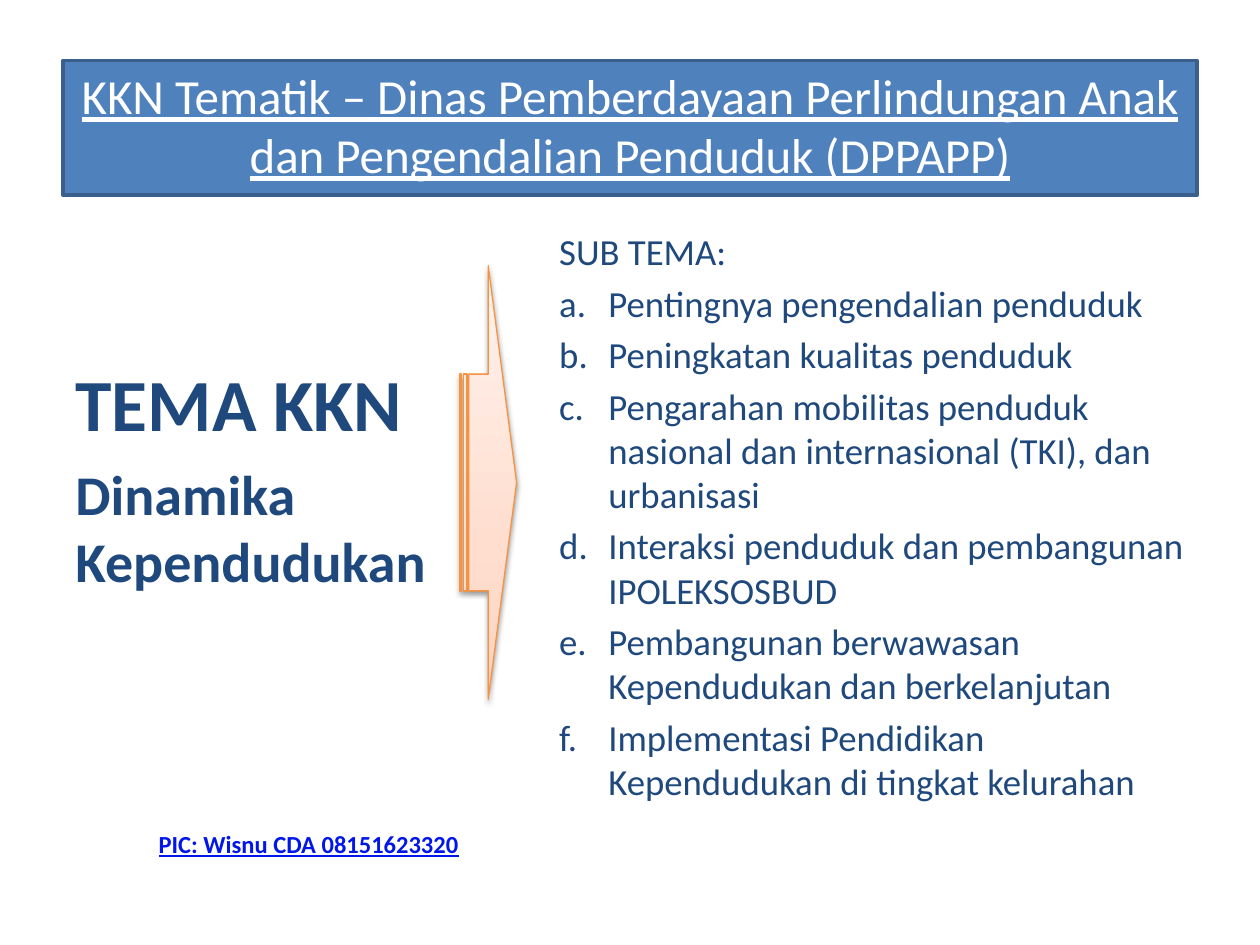
from lxml.etree import SubElement
from pptx import Presentation
from pptx.dml.color import RGBColor
from pptx.enum.shapes import MSO_SHAPE
from pptx.enum.text import MSO_ANCHOR, MSO_AUTO_SIZE, PP_ALIGN
from pptx.oxml import parse_xml
from pptx.oxml.ns import nsdecls, qn
from pptx.util import Inches, Pt

FONT = "Calibri"
NAVY = "1F497D"
SUBTHEMES = [
    "Pentingnya pengendalian penduduk",
    "Peningkatan kualitas penduduk",
    "Pengarahan mobilitas penduduk nasional dan internasional (TKI), dan urbanisasi",
    "Interaksi penduduk dan pembangunan IPOLEKSOSBUD",
    "Pembangunan berwawasan Kependudukan dan berkelanjutan",
    "Implementasi Pendidikan Kependudukan di tingkat kelurahan",
]


def color(value):
    return RGBColor.from_string(value)


def box(left, top, width, height):
    return [Inches(length) for length in (left, top, width, height)]


def format_runs(paragraph, size, hex_color, bold=False, underline=False):
    for run in paragraph.runs:
        font = run.font
        font.name = FONT
        font.size = Pt(size)
        font.bold = bold
        font.underline = underline
        font.color.rgb = color(hex_color)


def add_text(slide, position, text, size, hex_color, **style):
    shape = slide.shapes.add_textbox(*position)
    text_frame = shape.text_frame
    text_frame.word_wrap = True
    text_frame.text = text
    format_runs(text_frame.paragraphs[0], size, hex_color, **style)
    return text_frame


def set_title(slide, position, text):
    title = slide.shapes.title
    title.left, title.top, title.width, title.height = position
    text_frame = title.text_frame
    text_frame.text = text
    text_frame.auto_size = MSO_AUTO_SIZE.NONE
    text_frame.vertical_anchor = MSO_ANCHOR.BOTTOM
    paragraph = text_frame.paragraphs[0]
    paragraph.alignment = PP_ALIGN.LEFT
    format_runs(paragraph, 42, NAVY, bold=True)


def indent(paragraph):
    properties = paragraph._p.get_or_add_pPr()
    properties.set("marL", str(Inches(0.82)))
    properties.set("indent", str(Inches(-0.39)))
    return properties


def add_subthemes(slide, position):
    text_frame = add_text(slide, position, "SUB TEMA:", 21, NAVY)
    indent(text_frame.paragraphs[0])
    for subtheme in SUBTHEMES:
        paragraph = text_frame.add_paragraph()
        paragraph.text = subtheme
        numbering = SubElement(indent(paragraph), qn("a:buAutoNum"))
        numbering.set("type", "alphaLcPeriod")
        paragraph.space_before = Pt(4.2)
        format_runs(paragraph, 21, NAVY)


def add_banner(slide, position, text):
    banner = slide.shapes.add_shape(MSO_SHAPE.RECTANGLE, *position)
    banner.shadow.inherit = False
    banner.fill.solid()
    banner.fill.fore_color.rgb = color("4F81BD")
    banner.line.color.rgb = color("3A5F8C")
    banner.line.width = Pt(2)
    text_frame = banner.text_frame
    text_frame.word_wrap = True
    text_frame.vertical_anchor = MSO_ANCHOR.TOP
    text_frame.margin_left = text_frame.margin_right = Inches(0.09)
    text_frame.margin_top = text_frame.margin_bottom = Inches(0.04)
    text_frame.text = text
    paragraph = text_frame.paragraphs[0]
    paragraph.alignment = PP_ALIGN.CENTER
    format_runs(paragraph, 28, "FFFFFF", underline=True)


def add_arrow(slide, position):
    """Add the striped arrow with a three-stop gradient and a soft shadow."""
    arrow = slide.shapes.add_shape(MSO_SHAPE.STRIPED_RIGHT_ARROW, *position)
    arrow.line.color.rgb = color("F69240")
    arrow.line.width = Pt(0.75)
    stops = "".join(
        f'<a:gs pos="{percent * 1000}"><a:srgbClr val="{value}"/></a:gs>'
        for percent, value in ((0, "FFD2BD"), (35, "FFDED0"), (100, "FFF2ED"))
    )
    gradient = parse_xml(
        f'<a:gradFill {nsdecls("a")} rotWithShape="1"><a:gsLst>{stops}</a:gsLst>'
        '<a:lin ang="16200000" scaled="0"/></a:gradFill>'
    )
    shadow = parse_xml(
        f'<a:effectLst {nsdecls("a")}>'
        f'<a:outerShdw blurRad="{Pt(3.1)}" dist="{Pt(1.6)}" dir="5400000" rotWithShape="0">'
        '<a:srgbClr val="000000"><a:alpha val="38000"/></a:srgbClr>'
        "</a:outerShdw></a:effectLst>"
    )
    properties = arrow._element.spPr
    properties.find(qn("a:prstGeom")).addnext(gradient)
    properties.find(qn("a:ln")).addnext(shadow)


def main():
    presentation = Presentation()
    presentation.slide_width = Inches(10)
    presentation.slide_height = Inches(7.5)
    slide = presentation.slides.add_slide(presentation.slide_layouts[5])

    set_title(slide, box(0.5, 2.32, 3.29, 1.27), "TEMA KKN")
    add_subthemes(slide, box(3.91, 1.77, 5.59, 5.45))
    add_text(slide, box(0.5, 3.6, 3.29, 5.13), "Dinamika Kependudukan", 32, NAVY, bold=True)
    add_arrow(slide, box(3.65, 2.11, 0.45, 3.44))
    add_banner(
        slide,
        box(0.5, 0.48, 9, 1.07),
        "KKN Tematik – Dinas Pemberdayaan Perlindungan Anak "
        "dan Pengendalian Penduduk (DPPAPP)",
    )
    add_text(
        slide, box(1.16, 6.53, 2.92, 0.34), "PIC: Wisnu CDA 08151623320",
        14, "0016EA", bold=True, underline=True,
    )
    presentation.save("out.pptx")


if __name__ == "__main__":
    main()
